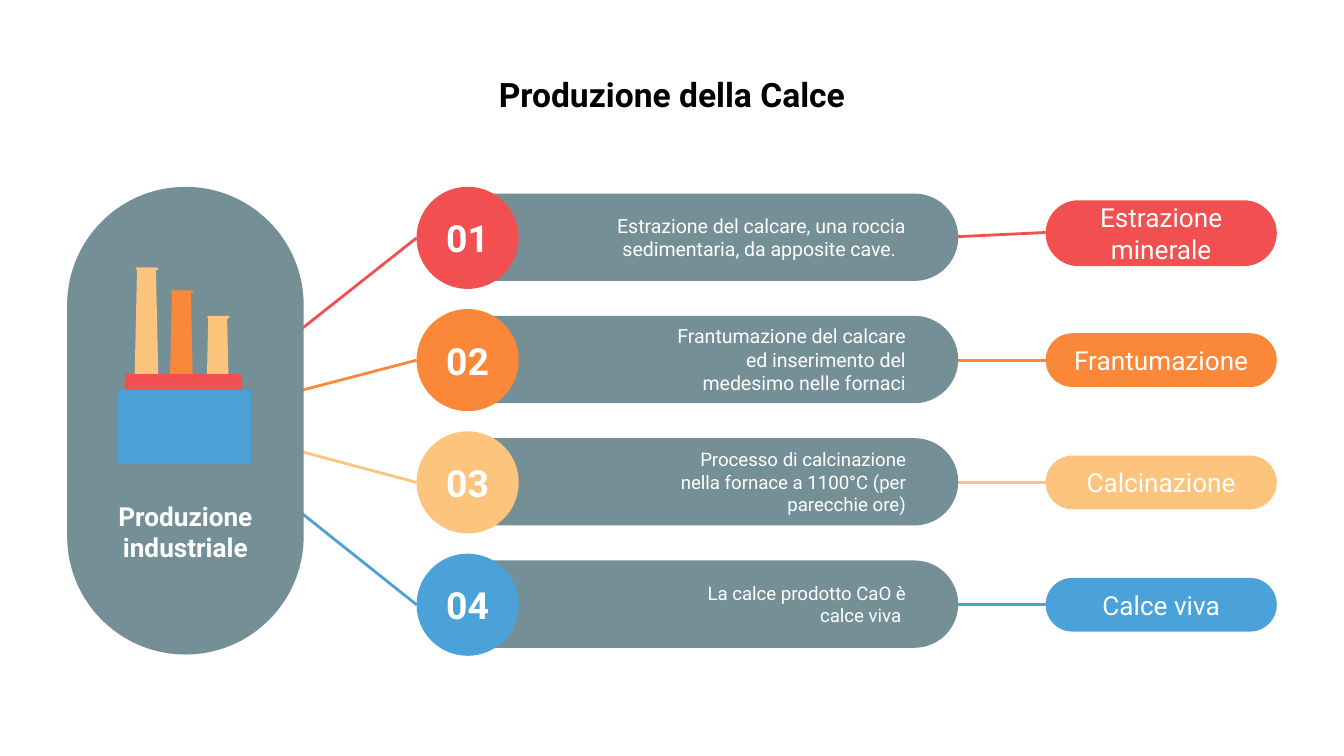
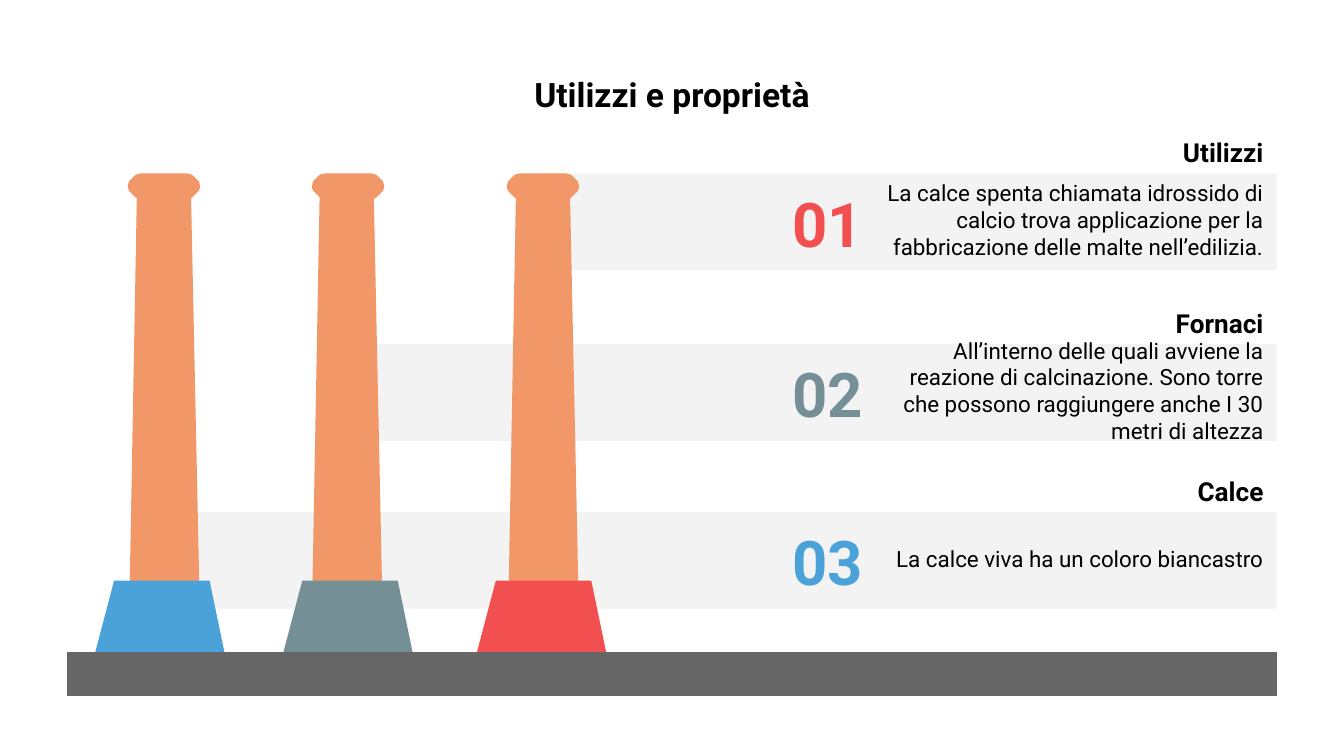
"""Build two slides on how lime is produced and used."""
from lxml.etree import SubElement
from pptx import Presentation
from pptx.dml.color import RGBColor
from pptx.enum.shapes import MSO_CONNECTOR as Line, MSO_SHAPE as Shape
from pptx.enum.text import MSO_ANCHOR as Anchor, MSO_AUTO_SIZE as AutoSize, PP_ALIGN as Align
from pptx.oxml.ns import qn
from pptx.util import Pt

PX = 9144
FONT = "Roboto"
COLORS = {
    "red": "F25050", "orange": "FA8838", "sand": "FDC47D", "blue": "4AA2D9",
    "slate": "749096", "brick": "F29868", "band": "F3F3F3", "ground": "666666",
    "white": "FFFFFF", "black": "000000",
}

STEPS = [
    {"color": "red", "text": "Estrazione del calcare, una roccia sedimentaria, da apposite cave.  ",
     "size": 10.5, "width": 298, "tag": "Estrazione minerale", "tag_middle": 173, "tag_height": 49},
    {"color": "orange", "text": "Frantumazione del calcare ed inserimento del medesimo nelle fornaci",
     "size": 10.5, "width": 256, "tag": "Frantumazione", "tag_middle": 268, "tag_height": 40},
    {"color": "sand", "text": "Processo di calcinazione nella fornace a 1100°C (per parecchie ore)",
     "size": 10, "width": 256, "tag": "Calcinazione", "tag_middle": 359, "tag_height": 40},
    {"color": "blue", "text": "La calce prodotto CaO è calce viva ",
     "size": 10, "width": 256, "tag": "Calce viva", "tag_middle": 450, "tag_height": 40},
]
FIRST_STEP, STEP_GAP = 177, 91
HUB = (138, 313)
STACKS = [("sand", 100, 200), ("orange", 126, 217), ("sand", 153, 236)]

TOPICS = [
    ("Utilizzi", "red", 403, 129,
     "La calce spenta chiamata idrossido di calcio trova applicazione "
     "per la fabbricazione delle malte nell’edilizia."),
    ("Fornaci", "slate", 261, 256,
     "All’interno delle quali avviene la reazione di calcinazione. "
     "Sono torre che possono raggiungere anche I 30 metri di altezza"),
    ("Calce", "blue", 125, 381, "La calce viva ha un coloro biancastro"),
]
TOWERS = [("blue", 95, 95, 71), ("slate", 231, 232, 211), ("red", 377, 377, 355)]
BAND_HEIGHT = 72
RIGHT = 950

HALF_CAP = [(10, 0), (6, 1), (4, 3), (1, 6), (0, 10), (1, 13), (4, 16), (6, 18), (10, 20)]
CAP = HALF_CAP + [(54 - x, y) for x, y in reversed(HALF_CAP)]


def rgb(name):
    """Return the named colour."""
    return RGBColor.from_string(COLORS[name])


def paint(shape, color):
    """Give a shape a flat fill without outline or shadow."""
    shape.fill.solid()
    shape.fill.fore_color.rgb = rgb(color)
    shape.line.fill.background()
    shape.shadow.inherit = False
    return shape


def write(shape, text, size, color="white", bold=False, align=Align.CENTER,
          anchor=Anchor.MIDDLE, left=10, right=10):
    """Set one formatted paragraph in a shape."""
    frame = shape.text_frame
    frame.word_wrap = True
    frame.auto_size = AutoSize.NONE
    frame.vertical_anchor = anchor
    frame.margin_left, frame.margin_right = left * PX, right * PX
    frame.margin_top = frame.margin_bottom = 10 * PX
    para = frame.paragraphs[0]
    para.alignment = align
    span = para.add_run()
    span.text = text
    span.font.name, span.font.size, span.font.bold = FONT, Pt(size), bold
    span.font.color.rgb = rgb(color)


def add_box(page, kind, color, *place):
    """Add a filled preset shape."""
    box = paint(page.shapes.add_shape(kind, *(n * PX for n in place)), color)
    if kind == Shape.ROUNDED_RECTANGLE:
        box.adjustments[0] = 0.5
    return box


def add_label(page, place, text, size, **style):
    """Add a text box."""
    write(page.shapes.add_textbox(*(n * PX for n in place)), text, size, **style)


def add_outline(shapes, color, points):
    """Add a filled polygon."""
    builder = shapes.build_freeform(*points[0], scale=PX)
    builder.add_line_segments(points[1:], close=True)
    paint(builder.convert_to_shape(), color)


def add_cap(shapes, color, left, top, width, height):
    """Add the rounded rim of a chimney."""
    add_outline(shapes, color,
                [(left + x * width / 54, top + y * height / 20) for x, y in CAP])


def add_block(shapes, color, left, top, width, height):
    """Add a rectangular outline."""
    right, bottom = left + width, top + height
    add_outline(shapes, color, [(left, top), (left, bottom), (right, bottom), (right, top)])


def add_line(page, color, start, end):
    """Add a straight line between two points."""
    line = page.shapes.add_connector(Line.STRAIGHT, *(n * PX for n in start + end))
    line.line.color.rgb = rgb(color)
    line.line.width = Pt(1.5)
    SubElement(line._element.spPr, qn("a:effectLst"))


def add_page(deck, title):
    """Add a title-only slide with the shared title style."""
    page = deck.slides.add_slide(deck.slide_layouts[5])
    head = page.shapes.title
    head.left, head.top, head.width, head.height = (n * PX for n in (50, 45, 900, 53))
    write(head, title, 18, color="black", bold=True, anchor=Anchor.TOP)
    return page


def add_factory(page):
    """Draw the factory emblem."""
    shapes = page.shapes.add_group_shape().shapes
    for color, x, top in STACKS:
        add_outline(shapes, color,
                    [(x + 2, top), (x, top + 89), (x + 18, top + 89), (x + 16, top)])
    add_block(shapes, "red", 93, 278, 87, 19)
    for color, x, top in STACKS:
        add_cap(shapes, color, x + 1, top - 1, 17, 2)
    add_block(shapes, "blue", 87, 290, 100, 55)


def build_production(deck):
    """Build the slide with the four production steps."""
    page = add_page(deck, "Produzione della Calce")
    rows = [(FIRST_STEP + i * STEP_GAP, step) for i, step in enumerate(STEPS)]
    for middle, step in rows:
        height, tag_middle = step["tag_height"], step["tag_middle"]
        tag = add_box(page, Shape.ROUNDED_RECTANGLE, step["color"],
                      778, tag_middle - height // 2, 172, height)
        write(tag, step["tag"], 14)
        add_line(page, step["color"], (694, middle), (778, tag_middle))
        add_box(page, Shape.ROUNDED_RECTANGLE, "slate", 321, middle - 33, 392, 65)
    for number, (middle, step) in enumerate(rows, 1):
        add_label(page, (694 - step["width"], middle - 23, step["width"], 45),
                  step["text"], step["size"], align=Align.RIGHT, left=60, right=20)
        add_line(page, step["color"], HUB, (310, middle))
        disc = add_box(page, Shape.OVAL, step["color"], 310, middle - 38, 76, 76)
        write(disc, f"{number:02}", 20, bold=True, left=0, right=0)
    add_box(page, Shape.ROUNDED_RECTANGLE, "slate", 50, 139, 176, 348)
    add_label(page, (64, 363, 148, 65), "Produzione industriale", 14, bold=True)
    add_factory(page)


def build_uses(deck):
    """Build the slide with the three topics and the kiln towers."""
    page = add_page(deck, "Utilizzi e proprietà")
    for _, _, left, top, _ in TOPICS:
        add_box(page, Shape.RECTANGLE, "band", left, top, RIGHT - left, BAND_HEIGHT)
    for color, shaft, cap, base in TOWERS:
        shapes = page.shapes.add_group_shape().shapes
        add_outline(shapes, "brick",
                    [(shaft + 7, 138), (shaft, 517), (shaft + 55, 517), (shaft + 47, 138)])
        add_cap(shapes, "brick", cap, 129, 54, 20)
        add_outline(shapes, color,
                    [(base + 14, 432), (base, 485), (base + 96, 485), (base + 85, 432)])
    add_block(page.shapes, "ground", 50, 485, 900, 33)
    for number, (heading, color, _, top, text) in enumerate(TOPICS, 1):
        add_label(page, (721, top - 31, 229, 31), heading, 14,
                  color="black", bold=True, align=Align.RIGHT)
        add_label(page, (645, top + 6, 305, 57), text, 12, color="black", align=Align.RIGHT)
        add_label(page, (575, top + 5, 82, 63), f"{number:02}", 33, color=color, bold=True)


def main():
    """Build and save the deck."""
    deck = Presentation()
    deck.slide_width, deck.slide_height = Pt(720), Pt(405)
    build_production(deck)
    build_uses(deck)
    deck.save("out.pptx")


if __name__ == "__main__":
    main()
